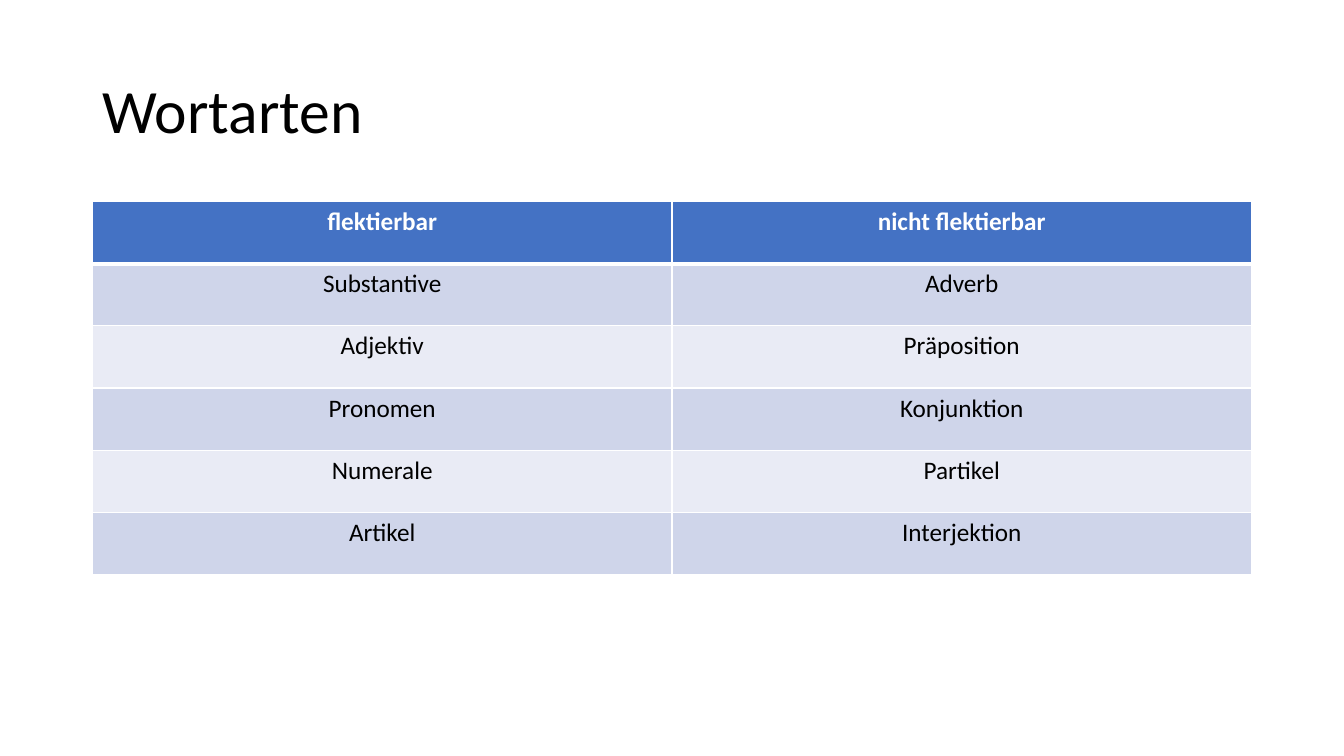
from lxml import etree
from pptx import Presentation
from pptx.dml.color import RGBColor
from pptx.enum import text
from pptx.oxml import ns
from pptx.util import Cm, Pt

WHITE = RGBColor(0xFF, 0xFF, 0xFF)
BLACK = RGBColor(0, 0, 0)
BLUE = RGBColor(0x44, 0x72, 0xC4)
BANDS = RGBColor(0xE9, 0xEB, 0xF5), RGBColor(0xCF, 0xD5, 0xEA)

WORDS = [
    ("flektierbar", "nicht flektierbar"),
    ("Substantive", "Adverb"),
    ("Adjektiv", "Präposition"),
    ("Pronomen", "Konjunktion"),
    ("Numerale", "Partikel"),
    ("Artikel", "Interjektion"),
]


def format_text(para, align, **style):
    """Align a paragraph and apply its font values."""
    para.alignment = align
    para.font.color.rgb = style.pop("color")
    for name, value in {"name": "Calibri", **style}.items():
        setattr(para.font, name, value)


def add_title(slide, words, left, top, width, height):
    """Place and format the title in the given box."""
    title = slide.shapes.title
    box = {"left": left, "top": top, "width": width, "height": height}
    for name, value in box.items():
        setattr(title, name, value)
    frame = title.text_frame
    frame.text = words
    frame.vertical_anchor = text.MSO_ANCHOR.MIDDLE
    para = frame.paragraphs[0]
    para.line_spacing = 0.9
    format_text(para, text.PP_ALIGN.LEFT, size=Pt(44), color=BLACK)


def add_edges(cell, top, bottom):
    """Draw white borders round a cell."""
    props = cell._tc.get_or_add_tcPr()
    for side, width in {"L": 1, "R": 1, "T": top, "B": bottom}.items():
        line = etree.SubElement(props, ns.qn(f"a:ln{side}"), w=str(Pt(width)))
        fill = etree.SubElement(line, ns.qn("a:solidFill"))
        etree.SubElement(fill, ns.qn("a:srgbClr"), val=str(WHITE))


def add_grid(slide, rows, left, top, width, height):
    """Place the word table in the given box."""
    frame = slide.shapes.add_table(len(rows), len(rows[0]), left, top, width, height)
    table = frame.table
    for r, row in enumerate(rows):
        head = r == 0
        for c, word in enumerate(row):
            cell = table.cell(r, c)
            add_edges(cell, 3 if r == 1 else 1, 3 if head else 1)
            cell.fill.solid()
            cell.fill.fore_color.rgb = BLUE if head else BANDS[r % 2]
            cell.text = word
            format_text(cell.text_frame.paragraphs[0], text.PP_ALIGN.CENTER,
                        size=Pt(18), bold=head, color=WHITE if head else BLACK)


def main():
    """Build and save the slide."""
    deck = Presentation()
    deck.slide_width, deck.slide_height = Cm(33.87), Cm(19.05)
    slide = deck.slides.add_slide(deck.slide_layouts[5])
    left, width = Cm(2.33), Cm(29.21)
    add_title(slide, "Wortarten", left, Cm(1.01), width, Cm(3.68))
    add_grid(slide, WORDS, left, Cm(5.08), width, Cm(9.4))
    deck.save("out.pptx")


if __name__ == "__main__":
    main()
